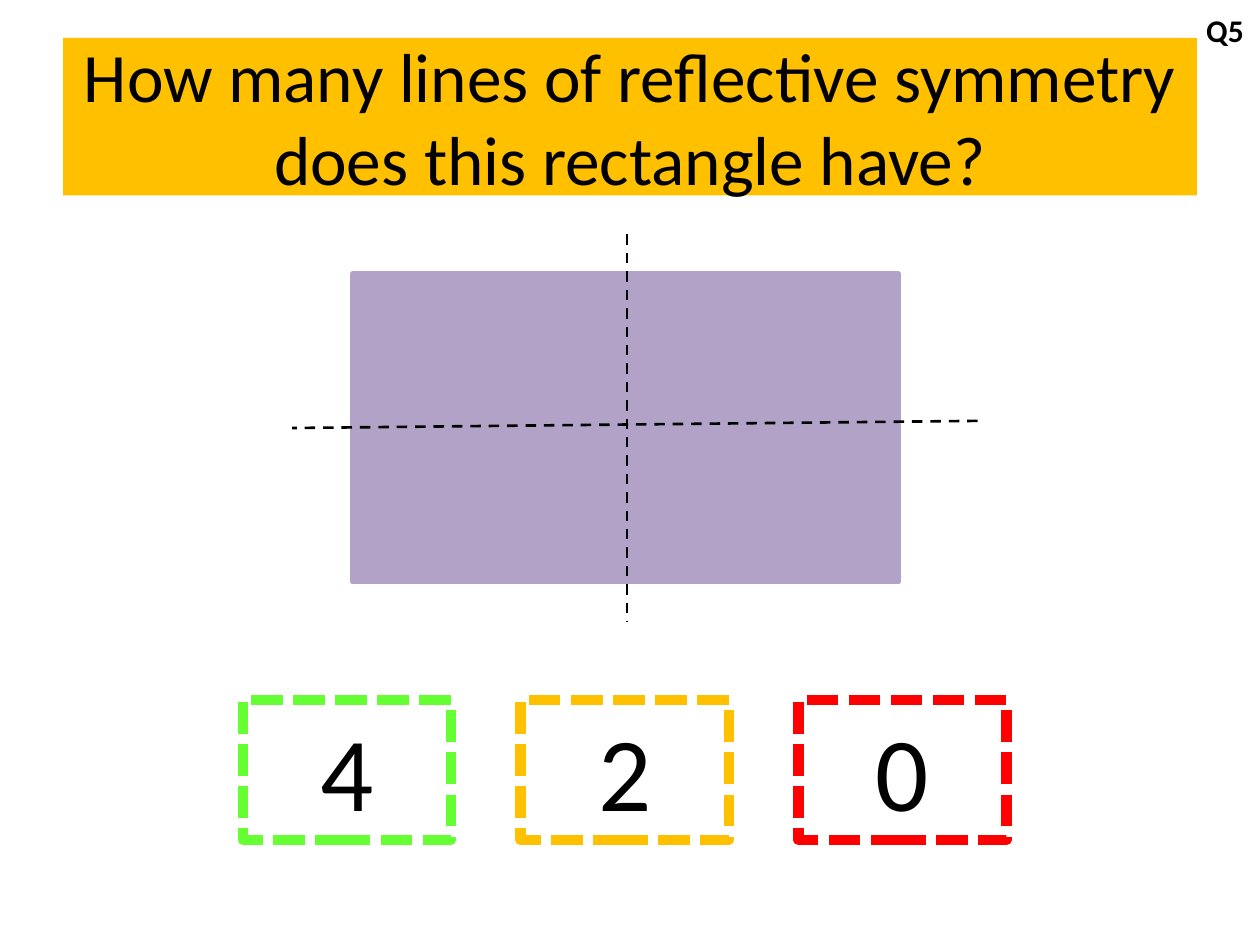
from dataclasses import dataclass

from pptx import Presentation
from pptx.dml.color import RGBColor
from pptx.enum.dml import MSO_LINE
from pptx.enum.shapes import MSO_CONNECTOR, MSO_SHAPE
from pptx.enum.text import MSO_ANCHOR, MSO_AUTO_SIZE, PP_ALIGN
from pptx.oxml.ns import qn
from pptx.util import Pt
from lxml.etree import SubElement


@dataclass(frozen=True)
class Theme:
    font: str = "Calibri"
    ink: str = "000000"
    banner: str = "FFC000"
    rectangle: str = "B3A2C7"
    green: str = "66FF33"
    amber: str = "FFC000"
    red: str = "FF0000"
    title_size: float = 39.6
    answer_size: float = 60
    label_size: float = 18


THEME = Theme()


def color(value):
    return RGBColor.from_string(value)


def write_text(shape, text, size, bold=False, anchor=MSO_ANCHOR.TOP,
               auto_size=MSO_AUTO_SIZE.SHAPE_TO_FIT_TEXT):
    """Fill a shape with one centred paragraph."""
    frame = shape.text_frame
    frame.text = text
    frame.word_wrap = True
    frame.vertical_anchor = anchor
    frame.auto_size = auto_size
    paragraph = frame.paragraphs[0]
    paragraph.alignment = PP_ALIGN.CENTER
    paragraph.font.name = THEME.font
    paragraph.font.size = Pt(size)
    paragraph.font.bold = bold
    paragraph.font.color.rgb = color(THEME.ink)


def style_line(line, line_color, width, dash=None):
    line.color.rgb = color(line_color)
    line.width = Pt(width)
    if dash is not None:
        line.dash_style = dash


def add_title(slide, text):
    title = slide.shapes.title
    title.left, title.top, title.width, title.height = Pt(36), Pt(21.6), Pt(648), Pt(90)
    title.fill.solid()
    title.fill.fore_color.rgb = color(THEME.banner)
    write_text(title, text, THEME.title_size, anchor=MSO_ANCHOR.MIDDLE,
               auto_size=MSO_AUTO_SIZE.NONE)


def add_rectangle(slide, left, top, width, height):
    shape = slide.shapes.add_shape(
        MSO_SHAPE.RECTANGLE, Pt(left), Pt(top), Pt(width), Pt(height))
    shape.shadow.inherit = False
    return shape


def add_symmetric_figure(slide):
    figure = add_rectangle(slide, 201.5, 156.5, 312, 176)
    figure.fill.solid()
    figure.fill.fore_color.rgb = color(THEME.rectangle)
    style_line(figure.line, THEME.rectangle, 3)


def add_answer(slide, left, text, outline):
    box = add_rectangle(slide, left, 400, 119, 80)
    box.fill.background()
    style_line(box.line, outline, 6, MSO_LINE.SQUARE_DOT)
    box.line._get_or_add_ln().find(qn("a:prstDash")).set("val", "sysDash")
    write_text(box, text, THEME.answer_size)


def add_label(slide, text):
    label = slide.shapes.add_textbox(Pt(677.5), Pt(3), Pt(45), Pt(29))
    write_text(label, text, THEME.label_size, bold=True)


def add_symmetry_line(slide, start_x, start_y, end_x, end_y):
    line = slide.shapes.add_connector(
        MSO_CONNECTOR.STRAIGHT, Pt(start_x), Pt(start_y), Pt(end_x), Pt(end_y))
    style_line(line.line, THEME.ink, 1.5, MSO_LINE.DASH)
    SubElement(line._element.spPr, qn("a:effectLst"))


def main():
    presentation = Presentation()
    presentation.slide_width, presentation.slide_height = Pt(720), Pt(540)
    slide = presentation.slides.add_slide(presentation.slide_layouts[5])

    # Question and figure
    add_title(slide, "How many lines of reflective symmetry does this rectangle have?")
    add_symmetric_figure(slide)

    # Answer choices at equal steps
    answers = [("4", THEME.green), ("2", THEME.amber), ("0", THEME.red)]
    for index, (text, outline) in enumerate(answers):
        add_answer(slide, 138.8 + index * 158.7, text, outline)

    # Question number
    add_label(slide, "Q5")

    # Lines of symmetry
    add_symmetry_line(slide, 358.4, 134, 358.4, 355)
    add_symmetry_line(slide, 558.7, 240.5, 167, 244.6)

    presentation.save("out.pptx")


if __name__ == "__main__":
    main()
